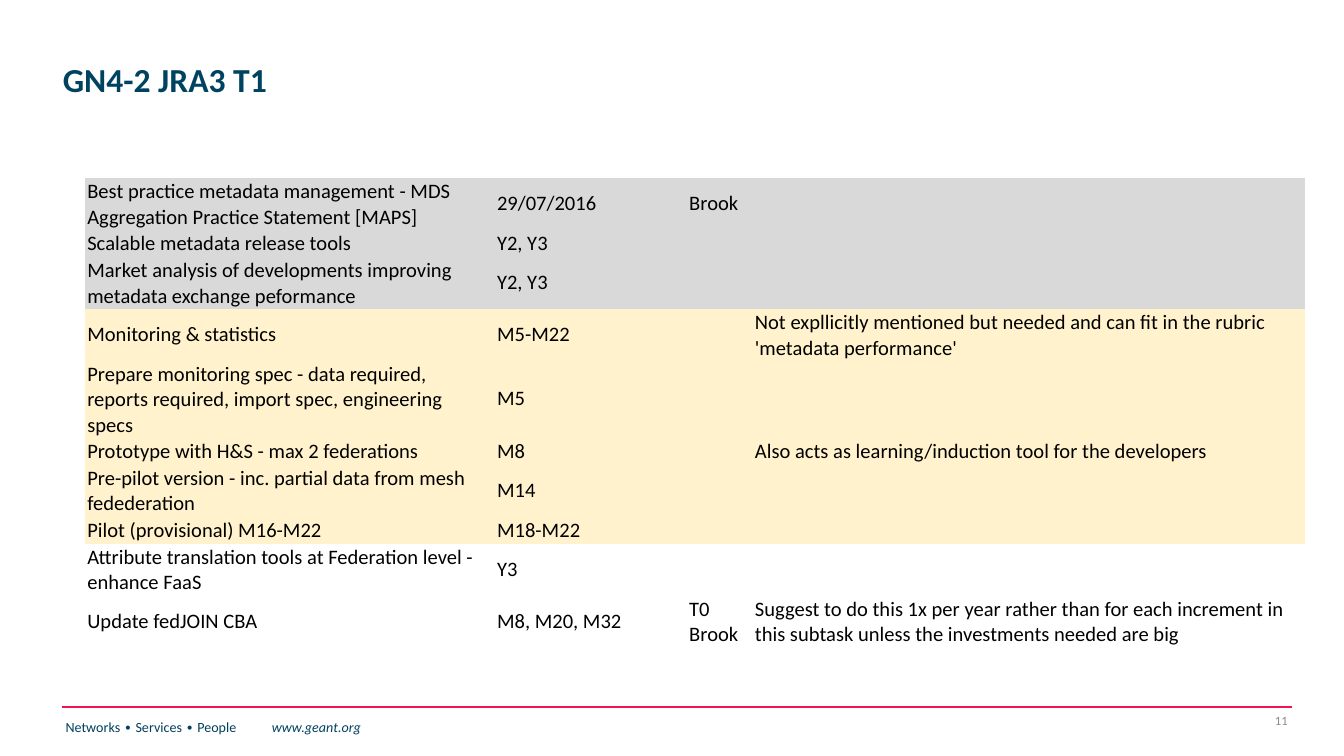
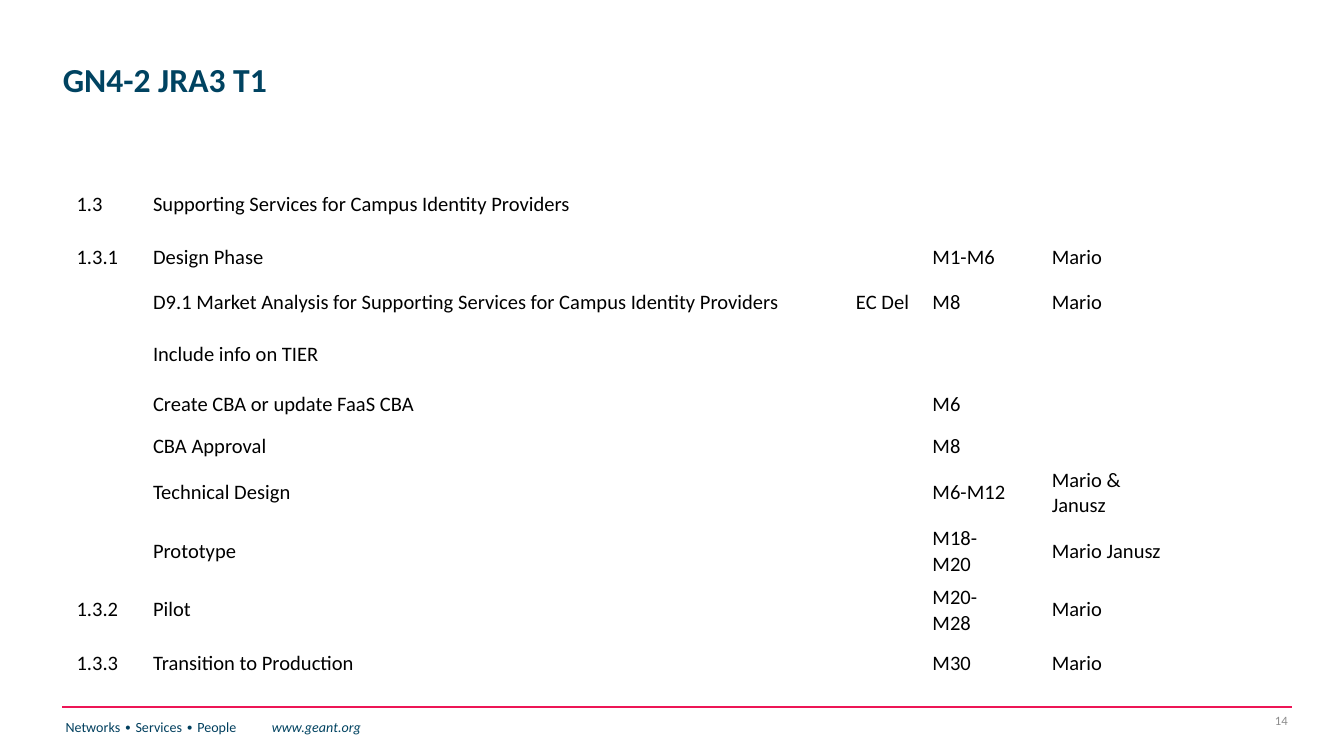
from lxml.etree import SubElement
from pptx import Presentation
from pptx.dml.color import RGBColor
from pptx.enum.shapes import MSO_CONNECTOR
from pptx.enum.text import MSO_ANCHOR, PP_ALIGN
from pptx.oxml.ns import qn
from pptx.util import Pt

FONT = "Calibri"
COLORS = {
    "title": "004361",
    "footer": "003F5E",
    "rule": "ED1556",
    "number": "8C8C8C",
    "text": "000000",
    "grey": "D9D9D9",
    "yellow": "FFF2CC",
}
TABLE_SIZE = 11
PLAIN_TABLE_STYLE = "{2D5ABB26-0587-4C30-8999-92F81FD0307C}"

# fill, task, date, owner, remark
METADATA_TASKS = [
    ("grey", "Best practice metadata management - MDS Aggregation Practice Statement [MAPS]",
     "29/07/2016", "Brook", ""),
    ("grey", "Scalable metadata release tools", "Y2, Y3", "", ""),
    ("grey", "Market analysis of developments improving metadata exchange peformance",
     "Y2, Y3", "", ""),
    ("yellow", "Monitoring & statistics", "M5-M22", "",
     "Not expllicitly mentioned but needed and can fit in the rubric 'metadata performance'"),
    ("yellow", "Prepare monitoring spec - data required, reports required, import spec, "
     "engineering specs", "M5", "", ""),
    ("yellow", "Prototype with H&S - max 2 federations", "M8", "",
     "Also acts as learning/induction tool for the developers"),
    ("yellow", "Pre-pilot version - inc. partial data from mesh fedederation", "M14", "", ""),
    ("yellow", "Pilot (provisional) M16-M22", "M18-M22", "", ""),
    (None, "Attribute translation tools at Federation level - enhance FaaS", "Y3", "", ""),
    (None, "Update fedJOIN CBA", "M8, M20, M32", "T0 Brook",
     "Suggest to do this 1x per year rather than for each increment in this subtask "
     "unless the investments needed are big"),
]

# number, task, type, date, owner
CAMPUS_TASKS = [
    ("1.3", "Supporting Services for Campus Identity Providers", "", "", ""),
    ("1.3.1", "Design Phase", "", "M1-M6", "Mario"),
    ("", "D9.1 Market Analysis for Supporting Services for Campus Identity Providers",
     "EC Del", "M8", "Mario"),
    ("", "Include info on TIER", "", "", ""),
    ("", "Create CBA or update FaaS CBA", "", "M6", ""),
    ("", "CBA Approval", "", "M8", ""),
    ("", "Technical Design", "", "M6-M12", "Mario & Janusz"),
    ("", "Prototype", "", "M18-M20", "Mario Janusz"),
    ("1.3.2", "Pilot", "", "M20-M28", "Mario"),
    ("1.3.3", "Transition to Production", "", "M30", "Mario"),
]


def rgb(name):
    return RGBColor.from_string(COLORS[name])


def style_span(span, size, color, bold=False, italic=False):
    span.font.name = FONT
    span.font.size = Pt(size)
    span.font.color.rgb = rgb(color)
    span.font.bold = bold
    span.font.italic = italic


def add_text(page, text, left, top, width, height, size, color, bold=False,
             align=PP_ALIGN.LEFT, anchor=MSO_ANCHOR.MIDDLE):
    """Add a one-paragraph text box and return the paragraph."""
    box = page.shapes.add_textbox(Pt(left), Pt(top), Pt(width), Pt(height))
    frame = box.text_frame
    frame.word_wrap = True
    frame.vertical_anchor = anchor
    frame.text = text
    para = frame.paragraphs[0]
    para.alignment = align
    for span in para.runs:
        style_span(span, size, color, bold)
    return para


def add_footer(page, number):
    rule = page.shapes.add_connector(
        MSO_CONNECTOR.STRAIGHT, Pt(33.5), Pt(378.7), Pt(692), Pt(378.7))
    rule.line.color.rgb = rgb("rule")
    rule.line.width = Pt(1)
    SubElement(rule._element.spPr, qn("a:effectLst"))

    para = add_text(page, "Networks ∙ Services ∙ People\t", 28, 381.6, 245.5, 25,
                    7.5, "footer", anchor=MSO_ANCHOR.TOP)
    tabs = SubElement(para._p.get_or_add_pPr(), qn("a:tabLst"))
    SubElement(tabs, qn("a:tab"), pos=str(Pt(110.5)), algn="l")
    address = para.add_run()
    address.text = "www.geant.org"
    style_span(address, 7.5, "title", italic=True)

    add_text(page, str(number), 653, 378, 44, 16.5, 6.8, "number", align=PP_ALIGN.RIGHT)


def add_page(deck, title, number):
    page = deck.slides.add_slide(deck.slide_layouts[6])
    add_footer(page, number)
    para = add_text(page, title, 26.6, 4.3, 567.4, 78.5, 18, "title", bold=True)
    para.line_spacing = 0.9
    return page


def fill_cell(cell, text, fill, side_margin, end_margin):
    cell.margin_left = cell.margin_right = Pt(side_margin)
    cell.margin_top = cell.margin_bottom = Pt(end_margin)
    cell.vertical_anchor = MSO_ANCHOR.MIDDLE
    if fill:
        cell.fill.solid()
        cell.fill.fore_color.rgb = rgb(fill)
    else:
        cell.fill.background()
    para = cell.text_frame.paragraphs[0]
    if text:
        para.text = text
        style_span(para.runs[0], TABLE_SIZE, "text")
    else:
        # Keeps an empty cell from forcing its row taller.
        SubElement(para._p, qn("a:endParaRPr"), sz=str(TABLE_SIZE * 100))


def add_task_table(page, left, top, height, widths, heights, rows, fills, margins):
    """Add a table without grid; rows map column index to text, column 0 stays unfilled."""
    shape = page.shapes.add_table(len(heights), len(widths), Pt(left), Pt(top),
                                  Pt(sum(widths)), Pt(height))
    table = shape.table
    table.first_row = table.horz_banding = False
    table._tbl.tblPr.find(qn("a:tableStyleId")).text = PLAIN_TABLE_STYLE
    for column, width in zip(table.columns, widths):
        column.width = Pt(width)
    for row, row_height in zip(table.rows, heights):
        row.height = Pt(row_height)
    shape.height = Pt(height)
    for row, texts, fill in zip(table.rows, rows, fills):
        for index, cell in enumerate(row.cells):
            fill_cell(cell, texts.get(index, ""), fill if index else None, *margins)


def main():
    deck = Presentation()
    deck.slide_width, deck.slide_height = Pt(720), Pt(405)

    page = add_page(deck, "GN4-2 JRA3 T1", 11)
    add_task_table(
        page, 26.6, 95.2, 251.3,
        widths=[18.8, 213.9, 5.2, 103, 35.2, 296],
        heights=[25.9, 10.8, 19.4, 19.4, 25.9, 13.7, 13.7, 10.8, 16.6, 25.9],
        rows=[dict(zip((1, 3, 4, 5), task[1:])) for task in METADATA_TASKS],
        fills=[task[0] for task in METADATA_TASKS],
        margins=(1.4, 0.7))

    page = add_page(deck, "GN4-2 JRA3 T1", 14)
    add_task_table(
        page, 36, 90, 277.9,
        widths=[41, 376.6, 41, 51.1, 12.4, 75.6],
        heights=[38.9, 15.8, 29.5, 26.6, 26.6, 15.8, 15.8, 15.8, 20.2, 26.6],
        rows=[dict(zip((0, 1, 2, 3, 5), task)) for task in CAMPUS_TASKS],
        fills=[None] * len(CAMPUS_TASKS),
        margins=(5, 2.5))

    deck.save("out.pptx")


if __name__ == "__main__":
    main()
